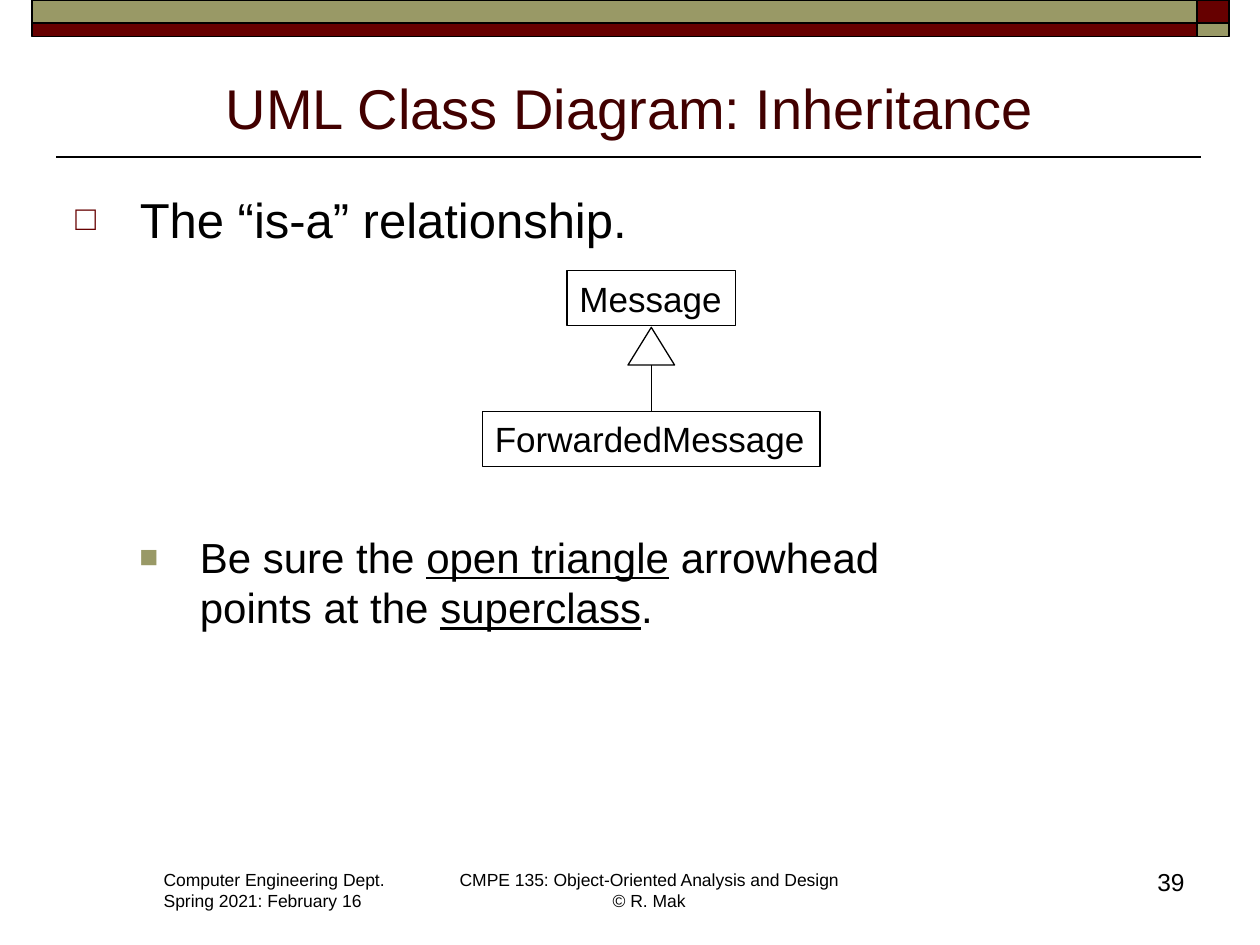
import pptx
import pptx.dml.color
import pptx.enum.shapes
import pptx.enum.text
import pptx.oxml.ns
import pptx.util
from dataclasses import dataclass
from lxml import etree

Cm = pptx.util.Cm
Pt = pptx.util.Pt
RGB = pptx.dml.color.RGBColor.from_string
SHAPE = pptx.enum.shapes.MSO_SHAPE
ALIGN = pptx.enum.text.PP_ALIGN
ANCHOR = pptx.enum.text.MSO_ANCHOR


@dataclass(frozen=True)
class Theme:
    font: str = "Arial"
    ink: str = "000000"
    heading: str = "420000"
    maroon: str = "660000"
    olive: str = "999966"
    title_size: int = 32
    point_size: int = 28
    detail_size: int = 24
    class_size: int = 20
    number_size: int = 14
    footer_size: int = 10
    rule_width: float = 1
    uml_width: float = 0.75


THEME = Theme()


def apply(target, values):
    for name, value in values.items():
        setattr(target, name, value)


def add_element(parent, tag, **attributes):
    return etree.SubElement(parent, pptx.oxml.ns.qn(tag), attributes)


def add_outlined(slide, kind, left, top, width, height, line_width, fill=None):
    outlined = slide.shapes.add_shape(kind, Cm(left), Cm(top), Cm(width), Cm(height))
    outlined.shadow.inherit = False
    if fill:
        outlined.fill.solid()
        outlined.fill.fore_color.rgb = RGB(fill)
    else:
        outlined.fill.background()
    outlined.line.color.rgb = RGB(THEME.ink)
    outlined.line.width = Pt(line_width)
    return outlined


def add_rule(slide, x1, y1, x2, y2, line_width):
    rule = slide.shapes.add_connector(
        pptx.enum.shapes.MSO_CONNECTOR.STRAIGHT, Cm(x1), Cm(y1), Cm(x2), Cm(y2))
    rule.line.color.rgb = RGB(THEME.ink)
    rule.line.width = Pt(line_width)
    add_element(rule._element.spPr, "a:effectLst")


def set_font(paragraph, size, color=THEME.ink):
    apply(paragraph.font, {"name": THEME.font, "size": Pt(size)})
    paragraph.font.color.rgb = RGB(color)


def write_lines(frame, lines, size, color=THEME.ink, align=ALIGN.LEFT):
    for index, line in enumerate(lines):
        paragraph = frame.add_paragraph() if index else frame.paragraphs[0]
        paragraph.text = line
        paragraph.alignment = align
        set_font(paragraph, size, color)


def add_label(slide, left, top, width, height, lines, size, wrap=True,
              anchor=ANCHOR.TOP, **style):
    frame = slide.shapes.add_textbox(Cm(left), Cm(top), Cm(width), Cm(height)).text_frame
    apply(frame, {"word_wrap": wrap, "vertical_anchor": anchor})
    write_lines(frame, lines, size, **style)


def add_class(slide, name, left, top, width, height):
    box = add_outlined(slide, SHAPE.RECTANGLE, left, top, width, height, THEME.uml_width)
    apply(box.text_frame, {"word_wrap": False, "vertical_anchor": ANCHOR.TOP})
    write_lines(box.text_frame, [name], THEME.class_size)


def format_bullet(paragraph, mark, color, percent, indent, hanging, size):
    properties = paragraph._p.get_or_add_pPr()
    apply_indent = {"marL": Cm(indent), "indent": -Cm(hanging)}
    for name, value in apply_indent.items():
        properties.set(name, str(value))
    bullet_color = add_element(properties, "a:buClr")
    add_element(bullet_color, "a:srgbClr", val=color)
    add_element(properties, "a:buSzPct", val=str(percent * 1000))
    add_element(properties, "a:buFont", typeface=THEME.font)
    add_element(properties, "a:buChar", char=mark)
    set_font(paragraph, size)


def add_run(paragraph, text, underline=False):
    run = paragraph.add_run()
    apply(run, {"text": text})
    run.font.underline = underline


def add_header(slide):
    # Two-tone bands with swapped end blocks, and the rule under the title
    left, split, right = 0.64, 24.13, 24.77
    bands = [(0, 0.46, THEME.olive, THEME.maroon), (0.46, 0.28, THEME.maroon, THEME.olive)]
    add_rule(slide, 24.21, 3.17, 1.12, 3.17, THEME.rule_width)
    for top, height, band_color, end_color in bands:
        for start, end, color in ((split, right, end_color), (left, split, band_color)):
            add_outlined(slide, SHAPE.RECTANGLE, start, top, end - start, height,
                         THEME.rule_width, color)
    add_label(slide, 1.27, 1.14, 22.86, 1.83, ["UML Class Diagram: Inheritance"],
              THEME.title_size, anchor=ANCHOR.BOTTOM, color=THEME.heading,
              align=ALIGN.CENTER)


def add_points(slide):
    frame = slide.shapes.add_textbox(Cm(1.27), Cm(3.69), Cm(22.86), Cm(13.2)).text_frame
    frame.word_wrap = True
    relationship = frame.paragraphs[0]
    format_bullet(relationship, "□", THEME.maroon, 70, 1.3, 1.3, THEME.point_size)
    add_run(relationship, "The “is-a” relationship.")

    # The space before leaves room for the diagram
    advice = frame.add_paragraph()
    advice.space_before = Pt(162)
    format_bullet(advice, "■", THEME.olive, 75, 2.51, 1.22, THEME.detail_size)
    add_run(advice, "Be sure the ")
    add_run(advice, "open triangle", underline=True)
    add_run(advice, " arrowhead ")
    advice.add_line_break()
    add_run(advice, "points at the ")
    add_run(advice, "superclass", underline=True)
    add_run(advice, ".")


def add_diagram(slide):
    axis, class_height = 13.13, 1.11
    for name, top, width in (("Message", 5.46, 3.4), ("ForwardedMessage", 8.29, 6.81)):
        add_class(slide, name, axis - width / 2, top, width, class_height)
    arrow_top, arrow_width, arrow_height = 6.6, 0.94, 0.76
    add_outlined(slide, SHAPE.ISOSCELES_TRIANGLE, axis - arrow_width / 2, arrow_top,
                 arrow_width, arrow_height, THEME.uml_width)
    add_rule(slide, axis, arrow_top + arrow_height, axis, 8.29, THEME.uml_width)


def add_footer(slide):
    add_label(slide, 3.05, 17.4, 5, 1.12,
              ["Computer Engineering Dept.", "Spring 2021: February 16"],
              THEME.footer_size, wrap=False)
    add_label(slide, 8.97, 17.4, 8.23, 1.12,
              ["CMPE 135: Object-Oriented Analysis and Design\v© R. Mak"],
              THEME.footer_size, wrap=False, align=ALIGN.CENTER)
    add_label(slide, 22.61, 17.35, 1.52, 1.27, ["39"], THEME.number_size,
              align=ALIGN.RIGHT)


def main():
    deck = pptx.Presentation()
    apply(deck, {"slide_width": Cm(25.4), "slide_height": Cm(19.05)})
    slide = deck.slides.add_slide(deck.slide_layouts[6])
    add_header(slide)
    add_footer(slide)
    add_points(slide)
    add_diagram(slide)
    deck.save("out.pptx")


if __name__ == "__main__":
    main()
